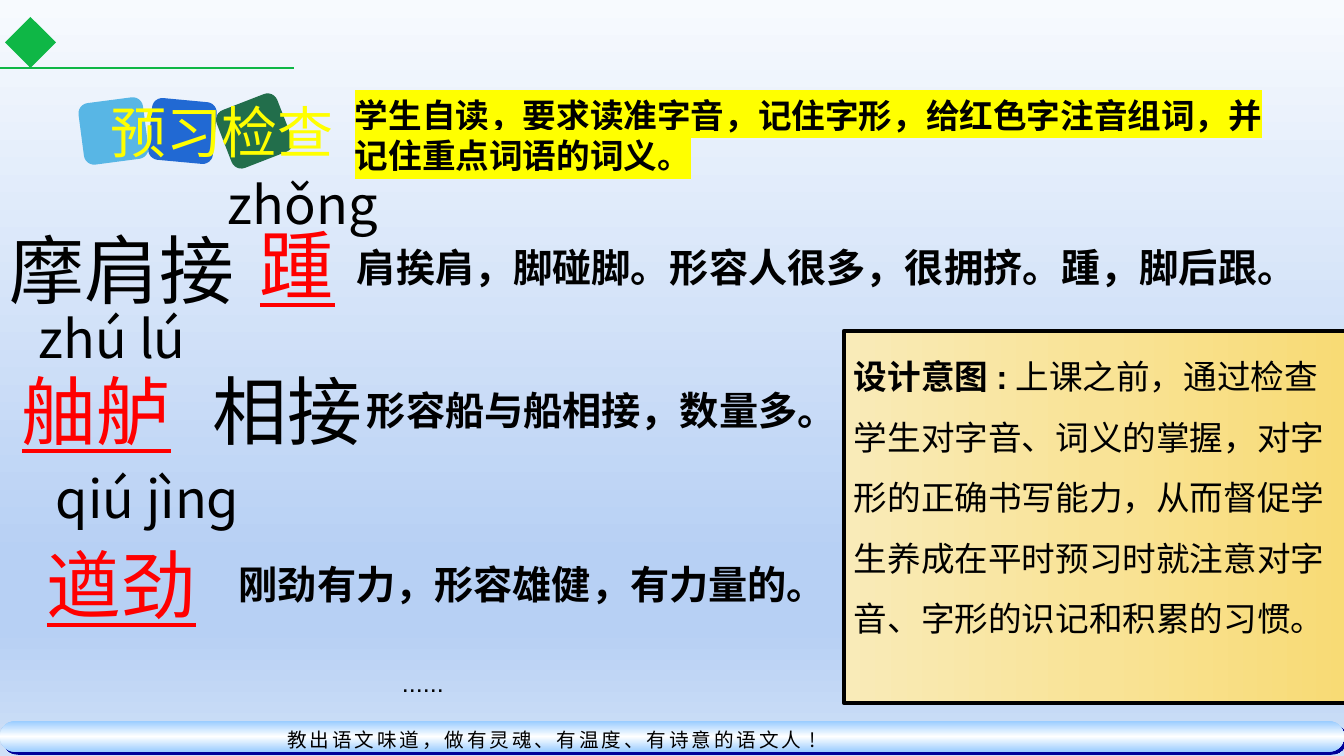
"""Build the lesson slide that checks the class's preview work."""
from dataclasses import dataclass

from lxml.etree import SubElement as Sub
from pptx import Presentation
from pptx.dml.color import RGBColor as Color
from pptx.enum.shapes import MSO_CONNECTOR as Link, MSO_SHAPE as Kind
from pptx.enum.text import MSO_ANCHOR as Anchor, MSO_AUTO_SIZE as Auto, PP_ALIGN as Align
from pptx.oxml.ns import qn
from pptx.util import Pt

SCALE = 914400 / 100.8


@dataclass(frozen=True)
class Theme:
    """Hold the colours, fonts and type sizes."""
    ink: str = "000000"
    red: str = "FF0000"
    yellow: str = "FFFF00"
    green: str = "0FB746"
    shade: str = "000099"
    chips: tuple = ("226E4B", "2169D3", "58B6E5")
    sky: tuple = ((0, "F7FAFE"), (74, "B7D0F4"), (83, "B7D0F4"), (100, "CFE0F7"))
    bar: tuple = ((0, "99CCFF"), (50, "FFFFFF"), (100, "99CCFF"))
    gold: tuple = ((0, "F9EBB8"), (50, "F9E397"), (100, "F8DB75"))
    latin: str = "Arial"
    hans: str = "Noto Sans CJK SC"
    sound: str = "Noto Sans CJK JP"
    word: float = 53.4
    title: float = 40
    tone: float = 37.4
    sense: float = 28
    body: float = 24
    dots: float = 18
    foot: float = 14


T = Theme()


def px(*sizes):
    """Turn pixel lengths into EMU."""
    return [round(size * SCALE) for size in sizes]


def blend(fill, node, stops, angle):
    """Fill with a gradient of the given stops."""
    fill.gradient()
    fill.gradient_angle = angle
    group = node.find(".//" + qn("a:gsLst"))
    group.clear()
    for spot, shade in stops:
        stop = Sub(group, qn("a:gs"), pos=str(spot * 1000))
        Sub(stop, qn("a:srgbClr"), val=shade)


def style(para, size, face=T.hans, ink=T.ink, bold=False, under=False, mark=None, gap=0):
    """Set the font of a paragraph."""
    font = para.font
    font.size, font.name, font.bold = Pt(size), face, bold
    font.color.rgb = Color.from_string(ink)
    if under:
        font.underline = True
    props = para._p.pPr.find(qn("a:defRPr"))
    latin = props.find(qn("a:latin"))
    east = Sub(props, qn("a:ea"), typeface=T.hans if face == T.latin else face)
    latin.addnext(east)
    if mark:
        glow = Sub(props, qn("a:highlight"))
        Sub(glow, qn("a:srgbClr"), val=mark)
        latin.addprevious(glow)
    if gap:
        props.set("spc", str(gap * 100))


def label(slide, box, lines, size, **look):
    """Add a text box and return its frame."""
    frame = slide.shapes.add_textbox(*px(*box)).text_frame
    frame.word_wrap = True
    frame.auto_size = Auto.SHAPE_TO_FIT_TEXT
    frame.text = lines
    for para in frame.paragraphs:
        style(para, size, **look)
    return frame


def block(slide, kind, box, fill=None, turn=0):
    """Add a shape with no line or shadow."""
    shape = slide.shapes.add_shape(kind, *px(*box))
    shape.shadow.inherit = False
    shape.line.fill.background()
    shape.rotation = turn
    if fill:
        shape.fill.solid()
        shape.fill.fore_color.rgb = Color.from_string(fill)
    return shape


def footer(slide, x, y, wide, high):
    """Draw the glossy bar and its motto."""
    bar = block(slide, Kind.ROUNDED_RECTANGLE, (x, y, wide, high))
    bar.adjustments[0] = 0.5
    blend(bar.fill, bar._element, T.bar, 270)
    cast = Sub(bar._element.spPr.find(qn("a:effectLst")), qn("a:outerShdw"),
               dist=str(Pt(2.8)), dir="2700000", algn="ctr", rotWithShape="0")
    Sub(cast, qn("a:srgbClr"), val=T.shade)
    motto = label(slide, (x + 274, y, 555, 38), "教出语文味道，做有灵魂、有温度、有诗意的语文人!",
                  T.foot, face=T.sound, gap=2)
    para = motto.paragraphs[0]
    para.alignment, para.line_spacing = Align.CENTER, 1.1


def header(slide, x, y):
    """Place the title on its chips, the green mark and the task."""
    for left, shade, turn in zip((222, 150, 81), T.chips, (338.8, 5.3, 352.5)):
        block(slide, Kind.ROUNDED_RECTANGLE, (x + left, y + 100, 65, 62), shade, turn)
    title = slide.shapes.title
    title.left, title.top, title.width, title.height = px(x + 100, y + 92, 252, 78)
    frame = title.text_frame
    frame.text = "预习检查"
    frame.word_wrap, frame.auto_size = True, Auto.SHAPE_TO_FIT_TEXT
    frame.vertical_anchor = Anchor.TOP
    frame.paragraphs[0].alignment = Align.LEFT
    style(frame.paragraphs[0], T.title, ink=T.yellow)
    slide.shapes._spTree.append(title._element)
    rule = slide.shapes.add_connector(Link.STRAIGHT, *px(x, y + 68, x + 294, y + 68))
    rule.line.color.rgb = Color.from_string(T.green)
    rule.line.width = Pt(1)
    Sub(rule._element.spPr, qn("a:effectLst"))
    block(slide, Kind.DIAMOND, (x + 5, y + 17, 51, 51), T.green)
    label(slide, (x + 345, y + 90, 940, 92),
          "学生自读，要求读准字音，记住字形，给红色字注音组词，并\n记住重点词语的词义。",
          T.body, face=T.latin, bold=True, mark=T.yellow)


def entry(slide, x, y, sound, words, sense):
    """Place one word with its sound above and its sense beside."""
    for left, top, wide, text, key in words:
        label(slide, (x + left, y + top, wide, 101), text, T.word,
              ink=T.red if key else T.ink, under=key)
    left, wide, text = sound
    label(slide, (x + left, y, wide, 74), text, T.tone, face=T.sound)
    left, top, wide, text = sense
    label(slide, (x + left, y + top, wide, 57), text, T.sense, bold=True)


def aim(slide, *box):
    """Draw the gold panel that states the aim."""
    panel = block(slide, Kind.RECTANGLE, box)
    blend(panel.fill, panel._element, T.gold, 0)
    panel.line.color.rgb = Color.from_string(T.ink)
    panel.line.width = Pt(3)
    frame = panel.text_frame
    frame.word_wrap, frame.vertical_anchor = True, Anchor.TOP
    para = frame.paragraphs[0]
    para.alignment, para.line_spacing = Align.LEFT, 1.5
    style(para, T.body, face=T.latin)
    head = para.add_run()
    head.text, head.font.bold = "设计意图:", True
    para.add_run().text = ("上课之前，通过检查学生对字音、词义的掌握，对字形的正确书写能力，"
                           "从而督促学生养成在平时预习时就注意对字音、字形的识记和积累的习惯。")


def main():
    """Build and save the deck."""
    deck = Presentation()
    deck.slide_width, deck.slide_height = px(1344, 756)
    slide = deck.slides.add_slide(deck.slide_layouts[5])
    blend(slide.background.fill, slide._element, T.sky, 270)
    footer(slide, 0, 721, 1344, 31)
    entry(slide, 0, 167, (218, 176, "zhǒng"),
          [(0, 52, 252, "摩肩接", False), (250, 47, 100, "踵", True)],
          (347, 71, 1010, "肩挨肩，脚碰脚。形容人很多，很拥挤。踵，脚后跟。"))
    entry(slide, 0, 301, (29, 176, "zhú lú"),
          [(12, 59, 180, "舳舻", True), (203, 59, 180, "相接", False)],
          (357, 80, 484, "形容船与船相接，数量多。"))
    entry(slide, 0, 461, (46, 236, "qiú jìnɡ"),
          [(37, 73, 180, "遒劲", True)],
          (229, 94, 594, "刚劲有力，形容雄健，有力量的。"))
    header(slide, 0, 0)
    label(slide, (392, 662, 448, 40), "......", T.dots, face=T.latin)
    aim(slide, 844, 331, 502, 372)
    deck.save("out.pptx")


if __name__ == "__main__":
    main()
